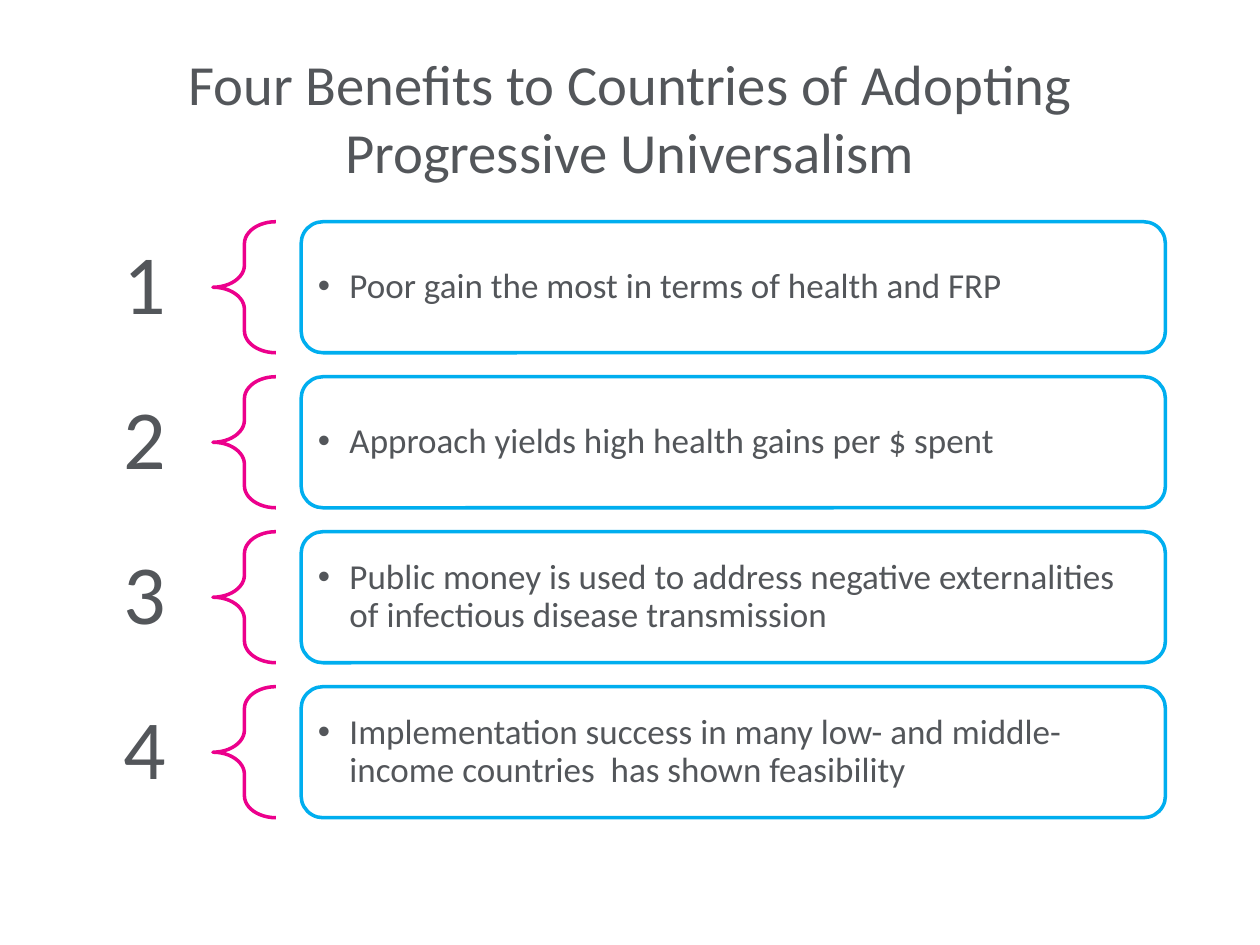
from lxml.etree import SubElement
from pptx import Presentation
from pptx.dml.color import RGBColor
from pptx.enum.shapes import MSO_SHAPE
from pptx.enum.text import MSO_ANCHOR, PP_ALIGN
from pptx.oxml.ns import qn
from pptx.util import Pt

COLORS = {"text": "53565A", "brace": "EC008C", "border": "00AEEF", "card": "FFFFFF"}
FONT = "Calibri"
TITLE = "Four Benefits to Countries of Adopting Progressive Universalism"
BENEFITS = [
    "Poor gain the most in terms of health and FRP",
    "Approach yields high health gains per $ spent",
    "Public money is used to address negative externalities of infectious disease transmission",
    "Implementation success in many low- and middle-income countries  has shown feasibility",
]
ROWS_TOP, ROW_PITCH, ROW_HEIGHT = 126.72, 88.56, 74.88
BRACE_LEFT, BRACE_WIDTH = 121.68, 36
CARD_LEFT, CARD_WIDTH = 172.08, 493.92


def color(name):
    return RGBColor.from_string(COLORS[name])


def write_text(shape, text, size, alignment, margins, line_spacing=1.0):
    """Fill the shape with one middle-anchored paragraph and return it."""
    horizontal, vertical = margins
    frame = shape.text_frame
    frame_format = {
        "word_wrap": True,
        "vertical_anchor": MSO_ANCHOR.MIDDLE,
        "margin_left": Pt(horizontal),
        "margin_right": Pt(horizontal),
        "margin_top": Pt(vertical),
        "margin_bottom": Pt(vertical),
    }
    for name, value in frame_format.items():
        setattr(frame, name, value)
    paragraph = frame.paragraphs[0]
    paragraph.alignment = alignment
    paragraph.line_spacing = line_spacing
    run = paragraph.add_run()
    run.text = text
    for name, value in {"name": FONT, "size": Pt(size)}.items():
        setattr(run.font, name, value)
    run.font.color.rgb = color("text")
    return paragraph


def add_bullet(paragraph, indent):
    properties = paragraph._p.get_or_add_pPr()
    properties.set("marL", str(Pt(indent)))
    properties.set("indent", str(Pt(-indent)))
    SubElement(properties, qn("a:buFont"), typeface="Arial")
    SubElement(properties, qn("a:buChar"), char="•")


def add_outlined(slide, kind, box, line, fill=None):
    shape = slide.shapes.add_shape(kind, *map(Pt, box))
    shape.shadow.inherit = False
    if fill:
        shape.fill.solid()
        shape.fill.fore_color.rgb = color(fill)
    else:
        shape.fill.background()
    shape.line.color.rgb = color(line)
    shape.line.width = Pt(2)
    return shape


def add_title(slide, left, top, width, height):
    box = slide.shapes.add_textbox(Pt(left), Pt(top), Pt(width), Pt(height))
    write_text(box, TITLE, 32.4, PP_ALIGN.CENTER, (7.2, 3.6))


def add_benefit(slide, number, text, top, height):
    """Place one row: number, brace and card."""
    label = slide.shapes.add_textbox(Pt(0), Pt(top), Pt(BRACE_LEFT), Pt(height))
    write_text(label, str(number), 48, PP_ALIGN.RIGHT, (26.88, 9.6), 0.9)

    brace = add_outlined(slide, MSO_SHAPE.LEFT_BRACE,
                         (BRACE_LEFT, top, BRACE_WIDTH, height), "brace")
    brace.adjustments[0] = 0.35

    card = add_outlined(slide, MSO_SHAPE.ROUNDED_RECTANGLE,
                        (CARD_LEFT, top, CARD_WIDTH, height), "border", "card")
    paragraph = write_text(card, text, 20, PP_ALIGN.LEFT, (6, 6), 0.9)
    add_bullet(paragraph, 18)


def main():
    presentation = Presentation()
    presentation.slide_width, presentation.slide_height = Pt(720), Pt(540)
    slide = presentation.slides.add_slide(presentation.slide_layouts[6])
    add_title(slide, 36, 21.6, 648, 90)
    for index, text in enumerate(BENEFITS):
        add_benefit(slide, index + 1, text, ROWS_TOP + index * ROW_PITCH, ROW_HEIGHT)
    presentation.save("out.pptx")


if __name__ == "__main__":
    main()
